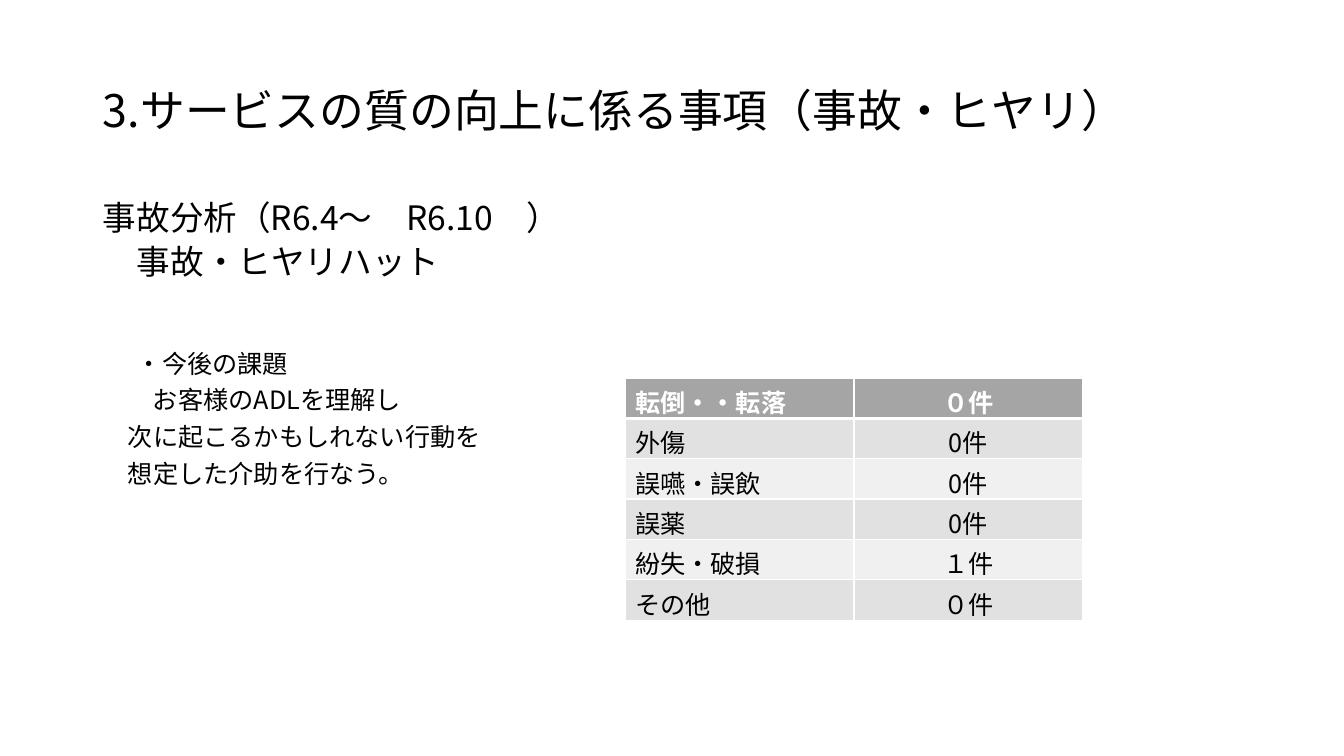
import pptx
import pptx.dml.color
import pptx.enum.text
import pptx.oxml
import pptx.oxml.ns
import pptx.util

PX = 914400 / 100.8
ANCHOR = pptx.enum.text.MSO_ANCHOR
ALIGN = pptx.enum.text.PP_ALIGN


def px(length):
    return pptx.util.Emu(round(length * PX))


def color(value):
    return pptx.dml.color.RGBColor.from_string(value)


class SlideBuilder:
    font = "Noto Sans CJK JP"
    ink = "000000"
    white = "FFFFFF"

    def __init__(self, slide):
        self.slide = slide

    def fill_paragraph(self, paragraph, text, size, ink=None, bold=False, **formats):
        """Fill a paragraph with one styled run."""
        for name, value in formats.items():
            setattr(paragraph, name, value)
        run = paragraph.add_run()
        run.text = text
        styles = {"name": self.font, "size": pptx.util.Pt(size), "bold": bold}
        for name, value in styles.items():
            setattr(run.font, name, value)
        run.font.color.rgb = color(ink or self.ink)
        latin = run.font._element.find(pptx.oxml.ns.qn("a:latin"))
        latin.addnext(latin.makeelement(pptx.oxml.ns.qn("a:ea"), {"typeface": self.font}))

    def text(self, left, top, width, height, lines, anchor=ANCHOR.TOP):
        """Add a text box; each line is (text, size, indent, space before, line spacing)."""
        shape = self.slide.shapes.add_textbox(px(left), px(top), px(width), px(height))
        frame = shape.text_frame
        frame.word_wrap = True
        frame.vertical_anchor = anchor
        for index, (text, size, indent, before, spacing) in enumerate(lines):
            paragraph = frame.add_paragraph() if index else frame.paragraphs[0]
            self.fill_paragraph(paragraph, text, size, line_spacing=spacing,
                                space_before=pptx.util.Pt(before))
            paragraph._p.get_or_add_pPr().set("marL", str(px(indent)))

    def border(self, cell, bottom):
        """Draw white cell borders, one point wide except the bottom."""
        properties = cell._tc.get_or_add_tcPr()
        widths = {"lnL": 1, "lnR": 1, "lnT": 1, "lnB": bottom}
        for index, (side, width) in enumerate(widths.items()):
            line = pptx.oxml.parse_xml(
                f'<a:{side} {pptx.oxml.ns.nsdecls("a")} w="{pptx.util.Pt(width)}">'
                f'<a:solidFill><a:srgbClr val="{self.white}"/></a:solidFill></a:{side}>')
            properties.insert(index, line)

    def table(self, left, top, column_width, row_height, rows, header_fill, bands):
        """Add a banded table whose first row is the header."""
        count = len(rows[0])
        frame = self.slide.shapes.add_table(
            len(rows), count, px(left), px(top),
            px(column_width * count), px(row_height * len(rows)))
        for column in frame.table.columns:
            column.width = px(column_width)
        for row_index, row in enumerate(rows):
            header = row_index == 0
            fill = header_fill if header else bands[(row_index - 1) % len(bands)]
            for column_index, text in enumerate(row):
                cell = frame.table.cell(row_index, column_index)
                cell.fill.solid()
                cell.fill.fore_color.rgb = color(fill)
                self.border(cell, 3 if header else 1)
                self.fill_paragraph(
                    cell.text_frame.paragraphs[0], text, 18,
                    self.white if header else self.ink, header,
                    alignment=ALIGN.CENTER if column_index else ALIGN.LEFT)


def main():
    presentation = pptx.Presentation()
    presentation.slide_width = px(1344)
    presentation.slide_height = px(756)
    builder = SlideBuilder(presentation.slides.add_slide(presentation.slide_layouts[6]))

    # Title
    builder.text(93, 40, 1159, 146,
                 [("3.サービスの質の向上に係る事項（事故・ヒヤリ）", 32, 0, 0, 0.9)],
                 ANCHOR.MIDDLE)

    # Analysis and future issues
    builder.text(93, 202, 1159, 480, [
        ("事故分析（R6.4～　R6.10　）", 24, 0, 10, 0.72),
        ("事故・ヒヤリハット", 24, 34, 10.7, 0.72),
        ("・今後の課題", 18, 34, 54, 0.72),
        ("お客様のADLを理解し", 18, 50, 10.7, 0.72),
        ("次に起こるかもしれない行動を", 18, 25, 10.7, 0.72),
        ("想定した介助を行なう。", 18, 25, 10.7, 0.72),
    ])

    # Incident counts
    builder.table(625, 378, 229, 40, [
        ("転倒・・転落", "０件"),
        ("外傷", "0件"),
        ("誤嚥・誤飲", "0件"),
        ("誤薬", "0件"),
        ("紛失・破損", "１件"),
        ("その他", "０件"),
    ], "A5A5A5", ["E1E1E1", "F0F0F0"])

    presentation.save("out.pptx")


if __name__ == "__main__":
    main()
